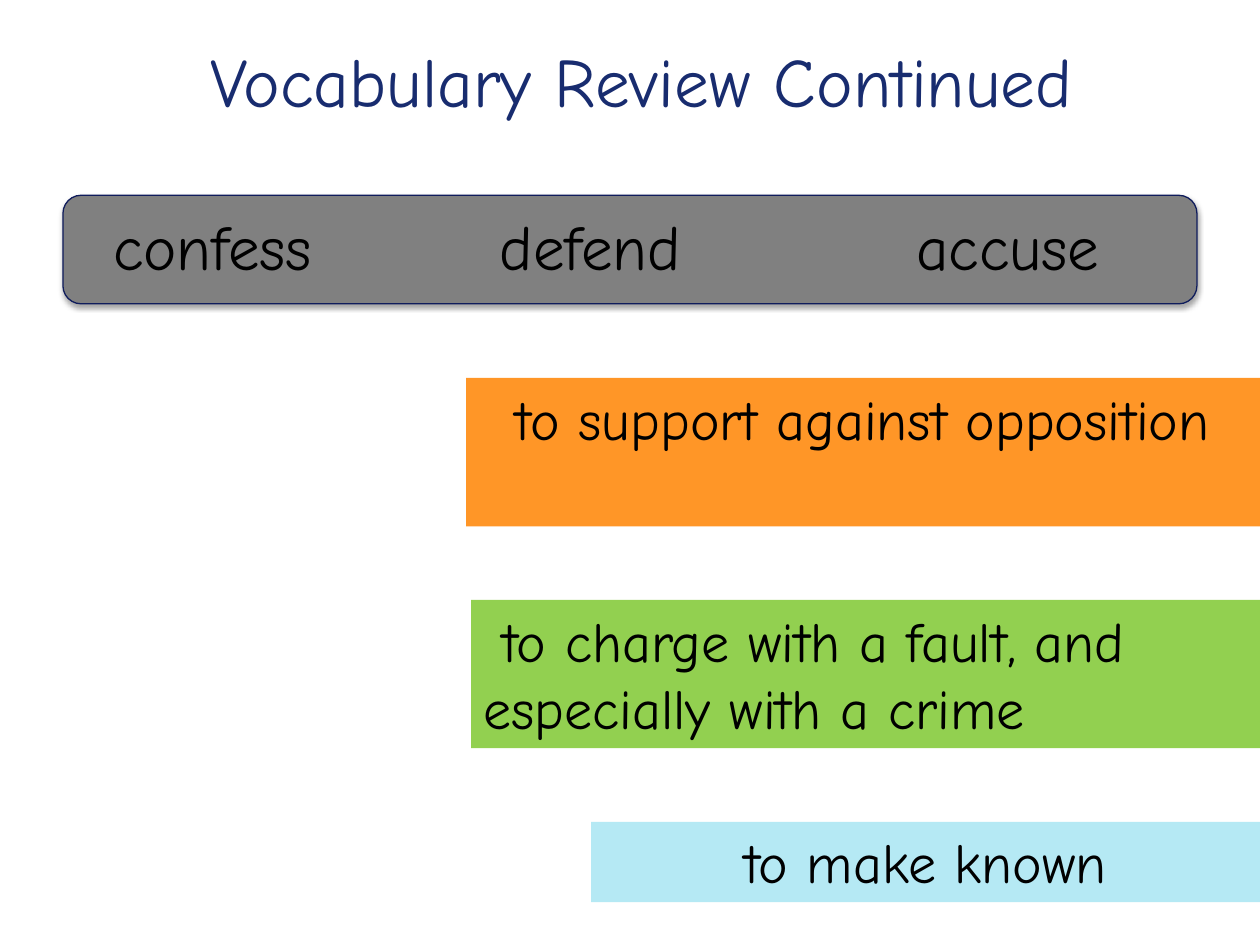
from dataclasses import dataclass

from lxml.etree import SubElement
from pptx import Presentation
from pptx.dml.color import RGBColor
from pptx.enum.shapes import MSO_SHAPE as Shape
from pptx.enum.text import MSO_ANCHOR as Anchor, PP_ALIGN as Align
from pptx.oxml.ns import qn
from pptx.slide import Slide
from pptx.text.text import TextFrame
from pptx.util import Pt

FONT = "Comic Neue"
NAVY = RGBColor(0x18, 0x2C, 0x6F)
DARK_NAVY = RGBColor(0x0F, 0x1C, 0x5C)
BLACK = RGBColor(0, 0, 0)
GRAY = RGBColor(0x80, 0x80, 0x80)
ORANGE = RGBColor(0xFF, 0x96, 0x27)
GREEN = RGBColor(0x92, 0xD0, 0x50)
PALE_BLUE = RGBColor(0xB5, 0xE9, 0xF4)

SLIDE_WIDTH, SLIDE_HEIGHT = 720, 540
WORD_TOP, WORD_WIDTH, WORD_HEIGHT = 115.2, 216, 51


@dataclass
class Word:
    text: str
    left: float


@dataclass
class Definition:
    text: str
    left: float
    top: float
    height: float
    color: RGBColor
    align: Align = Align.CENTER


WORDS = [Word("confess", 13.5), Word("defend", 229.5), Word("accuse", 468)]

DEFINITIONS = [
    Definition(" to support against opposition ", 266.4, 216, 84.8, ORANGE),
    Definition(" to charge with a fault, and especially with a crime",
               269.3, 342.8, 84.8, GREEN, Align.LEFT),
    Definition("to make known", 337.8, 469.6, 46, PALE_BLUE),
]


def write(frame: TextFrame, text: str, size: float, color: RGBColor,
          align: Align = Align.CENTER) -> None:
    frame.word_wrap = True
    frame.vertical_anchor = Anchor.TOP
    frame.text = text
    paragraph = frame.paragraphs[0]
    paragraph.alignment = align
    font = paragraph.runs[0].font
    font.name = FONT
    font.size = Pt(size)
    font.color.rgb = color


def add_title(slide: Slide, text: str) -> None:
    title = slide.shapes.title
    title.left, title.top, title.width, title.height = Pt(36), Pt(21.6), Pt(648), Pt(90)
    title.text_frame.margin_top = 0
    write(title.text_frame, text, 39.6, NAVY)


def add_word_bank(slide: Slide) -> None:
    bank = slide.shapes.add_shape(
        Shape.ROUNDED_RECTANGLE, Pt(36), Pt(111.6), Pt(648), Pt(62))
    bank.fill.solid()
    bank.fill.fore_color.rgb = GRAY
    bank.line.color.rgb = DARK_NAVY
    bank.line.width = Pt(0.75)
    bank.shadow.inherit = False
    effects = bank._element.spPr.find(qn("a:effectLst"))
    shadow = SubElement(effects, qn("a:outerShdw"), blurRad=str(Pt(3.1)),
                        dist=str(Pt(1.8)), dir="5400000", rotWithShape="0")
    shade = SubElement(shadow, qn("a:srgbClr"), val=str(BLACK))
    SubElement(shade, qn("a:alpha"), val="35000")


def add_word(slide: Slide, word: Word) -> None:
    label = slide.shapes.add_textbox(
        Pt(word.left), Pt(WORD_TOP), Pt(WORD_WIDTH), Pt(WORD_HEIGHT))
    write(label.text_frame, word.text, 36, BLACK)


def add_definition(slide: Slide, definition: Definition) -> None:
    band = slide.shapes.add_shape(
        Shape.RECTANGLE, Pt(definition.left), Pt(definition.top),
        Pt(SLIDE_WIDTH - definition.left), Pt(definition.height))
    band.fill.solid()
    band.fill.fore_color.rgb = definition.color
    band.line.fill.background()
    band.shadow.inherit = False
    write(band.text_frame, definition.text, 32, BLACK, definition.align)


def main() -> None:
    deck = Presentation()
    deck.slide_width, deck.slide_height = Pt(SLIDE_WIDTH), Pt(SLIDE_HEIGHT)
    slide = deck.slides.add_slide(deck.slide_layouts[5])
    add_title(slide, " Vocabulary Review Continued")
    add_word_bank(slide)
    for word in WORDS:
        add_word(slide, word)
    for definition in DEFINITIONS:
        add_definition(slide, definition)
    deck.save("out.pptx")


if __name__ == "__main__":
    main()
